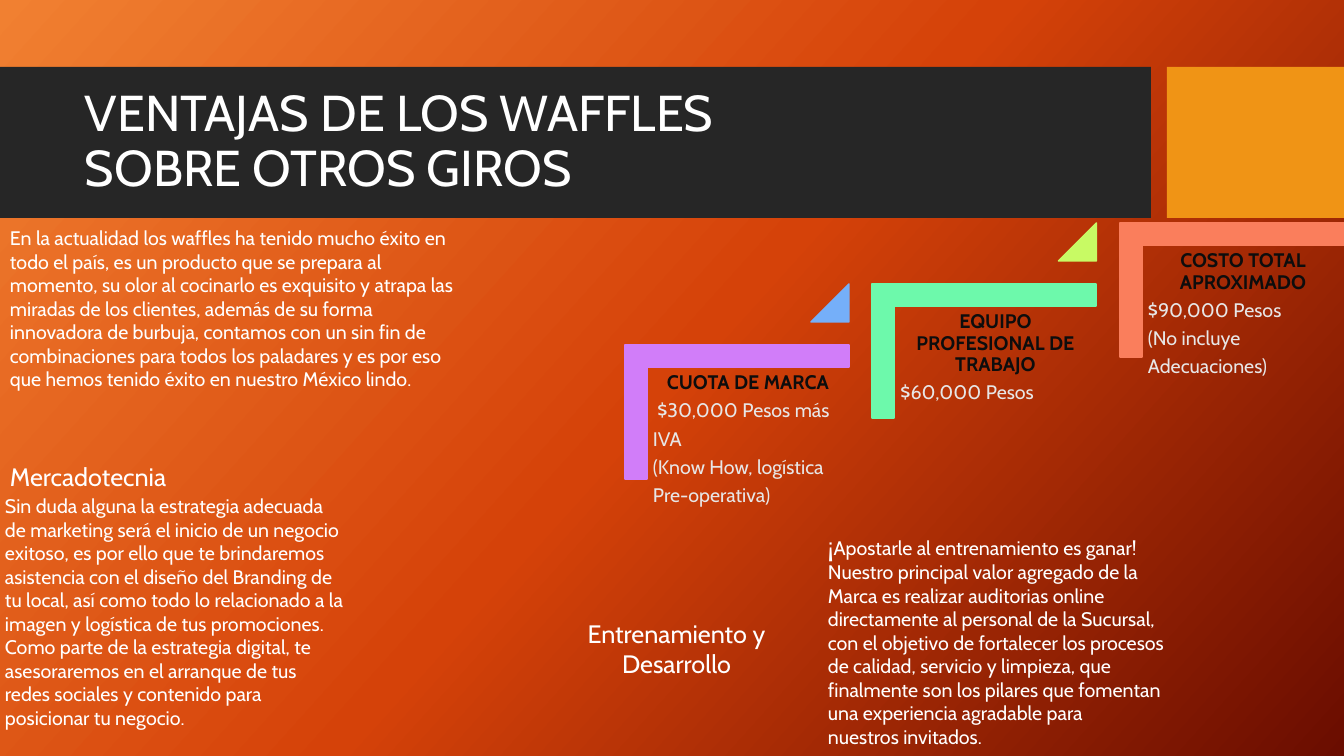
from pptx import Presentation
from pptx.dml.color import RGBColor
from pptx.enum.shapes import MSO_SHAPE as SHAPE
from pptx.enum.text import MSO_ANCHOR as ANCHOR, PP_ALIGN as ALIGN
from pptx.oxml import parse_xml
from pptx.oxml.ns import nsdecls
from pptx.util import Pt

WHITE = RGBColor(0xFF, 0xFF, 0xFF)
PALE = RGBColor(0xE7, 0xE6, 0xE6)
INK = RGBColor(0x0D, 0x0D, 0x0D)
CHARCOAL = RGBColor(0x26, 0x26, 0x26)
ORANGE = RGBColor(0xF0, 0x94, 0x15)
PURPLE = RGBColor(0xD1, 0x7D, 0xF9)
BLUE = RGBColor(0x75, 0xAF, 0xF9)
GREEN = RGBColor(0x6D, 0xF9, 0xAB)
LIME = RGBColor(0xC8, 0xFA, 0x64)
CORAL = RGBColor(0xFA, 0x7E, 0x5C)
BACKGROUND = [(0, RGBColor(0xF1, 0x80, 0x31)),
              (50, RGBColor(0xD5, 0x42, 0x09)),
              (100, RGBColor(0x6A, 0x0D, 0x00))]
FONT = "Cabin"

TITLE = "VENTAJAS DE LOS WAFFLES\vSOBRE OTROS GIROS"
BANDS = [((0, 67, 1151, 151), CHARCOAL), ((1167, 67, 177, 151), ORANGE)]

# heading, lines, corner colour, triangle colour
STEPS = [
    ("CUOTA DE MARCA",
     [" $30,000 Pesos más", "IVA", "(Know How, logística", "Pre-operativa)"],
     PURPLE, BLUE),
    ("EQUIPO PROFESIONAL DE TRABAJO", ["$60,000 Pesos"], GREEN, LIME),
    ("COSTO TOTAL APROXIMADO",
     ["$90,000 Pesos", "(No incluye", "Adecuaciones)"], CORAL, None),
]

INTRO = [
    "En la actualidad los waffles ha tenido mucho éxito en",
    "todo el país, es un producto que se prepara al",
    "momento, su olor al cocinarlo es exquisito y atrapa las",
    "miradas de los clientes, además de su forma",
    "innovadora de burbuja, contamos con un sin fin de",
    "combinaciones para todos los paladares y es por eso",
    "que hemos tenido éxito en nuestro México lindo.",
]
MARKETING = [
    "Sin duda alguna la estrategia adecuada",
    "de marketing será el inicio de un negocio",
    "exitoso, es por ello que te brindaremos",
    "asistencia con el diseño del Branding de",
    "tu local, así como todo lo relacionado a la",
    "imagen y logística de tus promociones.",
    "Como parte de la estrategia digital, te",
    "asesoraremos en el arranque de tus",
    "redes sociales y contenido para",
    "posicionar tu negocio.",
]
TRAINING = [
    "¡",
    "Nuestro principal valor agregado de la",
    "Marca es realizar auditorias online",
    "directamente al personal de la Sucursal,",
    "con el objetivo de fortalecer los procesos",
    "de calidad, servicio y limpieza, que",
    "finalmente son los pilares que fomentan",
    "una experiencia agradable para",
    "nuestros invitados.",
]
TRAINING_CALL = "Apostarle al entrenamiento es ganar!"

# box, lines, size, alignment
TEXTS = [
    ((0, 221, 535, 176), INTRO, 14, ALIGN.JUSTIFY),
    ((0, 456, 194, 40), ["Mercadotecnia"], 18, ALIGN.LEFT),
    ((-5, 489, 423, 248), MARKETING, 14, ALIGN.LEFT),
    ((535, 613, 283, 72), ["Entrenamiento y Desarrollo"], 18, ALIGN.CENTER),
]
TRAINING_BOX = (818, 525, 498, 231)

PX = 914400 / 100.8
STEP_X, STEP_Y = 647, 367
STEP_DX, STEP_DY = 247.5, -61
CORNER_W, CORNER_H, CORNER_BAR = 224, 134, 22


def emu(box):
    return [round(v * PX) for v in box]


def paint(s, color, outlined=False):
    s.shadow.inherit = False
    s.fill.solid()
    s.fill.fore_color.rgb = color
    if outlined:
        s.line.color.rgb = color
        s.line.width = Pt(1)
    else:
        s.line.fill.background()


def add_corner(x, y, color):
    """Draw a bar along the top and down the left, from the point x, y."""
    right, bottom = x + CORNER_W, y + CORNER_H
    inner_x, inner_y = x + CORNER_BAR, y + CORNER_BAR
    outline = slide.shapes.build_freeform(x, y, scale=PX)
    outline.add_line_segments([(right, y), (right, inner_y), (inner_x, inner_y),
                               (inner_x, bottom), (x, bottom)])
    paint(outline.convert_to_shape(), color, True)


def add_text(box, lines, size, align=ALIGN.LEFT, color=WHITE):
    tf = slide.shapes.add_textbox(*emu(box)).text_frame
    tf.word_wrap = True
    for i, line in enumerate(lines):
        p = tf.add_paragraph() if i else tf.paragraphs[0]
        p.text = line
        p.alignment = align
        p.font.name = FONT
        p.font.size = Pt(size)
        p.font.color.rgb = color
    return tf


def add_step(i, heading, lines, corner_color, triangle_color):
    x, y = STEP_X + i * STEP_DX, STEP_Y + i * STEP_DY
    add_corner(x - CORNER_BAR, y - CORNER_BAR, corner_color)
    tf = add_text((x, y, 202, 177), [heading] + lines, 14, color=PALE)
    tf.margin_left = tf.margin_right = tf.margin_top = tf.margin_bottom = round(6 * PX)
    for p in tf.paragraphs:
        p.line_spacing = 0.9
        p.space_after = Pt(4.9)
    p = tf.paragraphs[0]
    p.alignment = ALIGN.CENTER
    p.font.bold = True
    p.font.color.rgb = INK
    if triangle_color is not None:
        triangle = slide.shapes.add_shape(SHAPE.ISOSCELES_TRIANGLE,
                                          *emu((x + 164, y - 83, 38, 38)))
        triangle.adjustments[0] = 1
        paint(triangle, triangle_color, True)


def set_background(stops, angle):
    gs = "".join(f'<a:gs pos="{pos * 1000}"><a:srgbClr val="{color}"/></a:gs>'
                 for pos, color in stops)
    slide.element.cSld.insert(0, parse_xml(
        f'<p:bg {nsdecls("p", "a")}><p:bgPr><a:gradFill><a:gsLst>{gs}</a:gsLst>'
        f'<a:lin ang="{angle * 60000}" scaled="0"/></a:gradFill>'
        '<a:effectLst/></p:bgPr></p:bg>'))


prs = Presentation()
prs.slide_width, prs.slide_height = emu((1344, 756))
slide = prs.slides.add_slide(prs.slide_layouts[6])
set_background(BACKGROUND, 42)

for box, color in BANDS:
    paint(slide.shapes.add_shape(SHAPE.RECTANGLE, *emu(box)), color)
tf = add_text((75, 83, 653, 119), [TITLE], 36)
tf.vertical_anchor = ANCHOR.MIDDLE
tf.paragraphs[0].line_spacing = 0.9

for i, step in enumerate(STEPS):
    add_step(i, *step)
for text in TEXTS:
    add_text(*text)

p = add_text(TRAINING_BOX, TRAINING, 14).paragraphs[0]
p.runs[0].font.size = Pt(18)
r = p.add_run()
r.text = TRAINING_CALL

prs.save("out.pptx")
